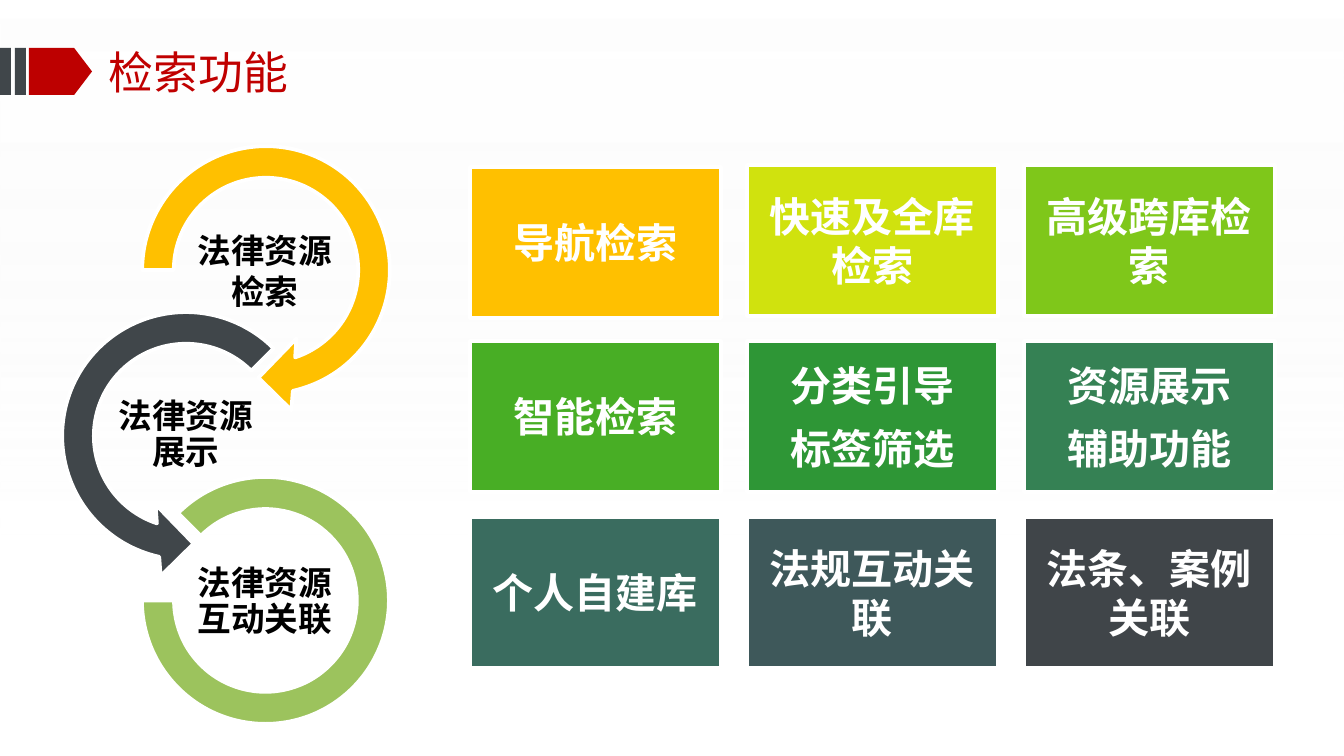
from lxml.etree import SubElement
from pptx import Presentation
from pptx.dml.color import RGBColor
from pptx.enum.shapes import MSO_SHAPE
from pptx.enum.text import MSO_ANCHOR, PP_ALIGN
from pptx.oxml.ns import qn
from pptx.util import Emu, Pt

FONT = "Noto Sans CJK SC"
WIDTH, HEIGHT = 1344, 756
EMU_PER_PX = 9144000 / WIDTH

RED, SLATE = "BD0000", "40464A"
CARD_W, CARD_H = 251, 151
CARD_LEFT, CARD_TOP = 470, 165
COLUMN_STEP, ROW_STEP = 277, 176
CARDS = [
    ("导航检索", "FFC000"), ("快速及全库检索", "D0E20E"), ("高级跨库检索", "7FC71A"),
    ("智能检索", "48AE25"), ("分类引导\n标签筛选", "2E9636"), ("资源展示\n辅助功能", "358154"),
    ("个人自建库", "3A6C5F"), ("法规互动关联", "3E585A"), ("法条、案例关联", "404549"),
]
# preset, box, adjustments, colour
RINGS = [
    (MSO_SHAPE.CIRCULAR_ARROW, (122, 126, 288, 288), (0.11, 11.42, 45, 108, 0.125), "FFC000"),
    (MSO_SHAPE.LEFT_CIRCULAR_ARROW, (42, 292, 288, 288), (0.11, 11.42, 63, 189, 0.125), SLATE),
    (MSO_SHAPE.BLOCK_ARC, (142, 477, 247, 247), (135, 108, 0.13), "9CC35D"),
]
# text, left, top, line spacing
RING_LABELS = [
    ("法律资源检索", 185, 231, 1.0),
    ("法律资源展示", 106, 396, 0.9),
    ("法律资源互动关联", 185, 563, 0.9),
]


def px(n):
    return Emu(round(n * EMU_PER_PX))


def rgb(value):
    return RGBColor.from_string(value)


def add_shape(slide, preset, box, color, outlined=False, adjustments=()):
    s = slide.shapes.add_shape(preset, *map(px, box))
    s.shadow.inherit = False
    s.fill.solid()
    s.fill.fore_color.rgb = rgb(color)
    if outlined:
        s.line.color.rgb = rgb("FFFFFF")
        s.line.width = Pt(2)
    else:
        s.line.fill.background()
    for i, value in enumerate(adjustments):
        s.adjustments[i] = value
    return s


def set_text(s, text, size, color, inset, bold=True, align=PP_ALIGN.CENTER, spacing=1.0):
    tf = s.text_frame
    tf.word_wrap = True
    tf.vertical_anchor = MSO_ANCHOR.MIDDLE
    tf.margin_left = tf.margin_right = tf.margin_top = tf.margin_bottom = px(inset)
    tf.text = text
    for p in tf.paragraphs:
        p.alignment = align
        p.line_spacing = spacing
        p.space_after = Pt(7)
        for r in p.runs:
            r.font.name = FONT
            r.font.size = Pt(size)
            r.font.bold = bold
            r.font.color.rgb = rgb(color)
            SubElement(r.font._element, qn("a:ea"), typeface=FONT)


def add_backdrop(slide):
    """Cover the slide with a translucent vertical gradient."""
    s = add_shape(slide, MSO_SHAPE.RECTANGLE, (0, 0, WIDTH, HEIGHT), "FFFFFF")
    s.fill.gradient()
    s.fill.gradient_angle = 270
    stops = [("FFFFFF", 0, 55), ("F2F2F2", 0.71, 0)]
    for stop, (color, position, opacity) in zip(s.fill.gradient_stops, stops):
        stop.color.rgb = rgb(color)
        stop.position = position
        clr = stop._gs.find(qn("a:srgbClr"))
        SubElement(clr, qn("a:alpha"), val=str(opacity * 1000))


def add_header(slide):
    add_shape(slide, MSO_SHAPE.PENTAGON, (29, 48, 63, 47), RED, adjustments=[0.38])
    for left in (15, 0):
        add_shape(slide, MSO_SHAPE.RECTANGLE, (left, 48, 11, 47), SLATE)
    title = slide.shapes.add_textbox(*map(px, (109, 40, 659, 63)))
    set_text(title, "检索功能", 24, "C00000", 0, bold=False, align=PP_ALIGN.LEFT)


def add_rings(slide):
    for preset, box, adjustments, color in RINGS:
        add_shape(slide, preset, box, color, True, adjustments)
    for text, left, top, spacing in RING_LABELS:
        label = slide.shapes.add_textbox(*map(px, (left, top, 160, 79)))
        set_text(label, text, 18, "000000", 1, spacing=spacing)


def add_cards(slide):
    for i, (text, color) in enumerate(CARDS):
        row, column = divmod(i, 3)
        left = CARD_LEFT + column * COLUMN_STEP
        top = CARD_TOP + row * ROW_STEP + (2 if i == 0 else 0)
        card = add_shape(slide, MSO_SHAPE.RECTANGLE, (left, top, CARD_W, CARD_H), color, True)
        set_text(card, text, 22, "FFFFFF", 12)


def main():
    prs = Presentation()
    prs.slide_width, prs.slide_height = px(WIDTH), px(HEIGHT)
    slide = prs.slides.add_slide(prs.slide_layouts[6])
    add_backdrop(slide)
    add_header(slide)
    add_rings(slide)
    add_cards(slide)
    prs.save("out.pptx")


if __name__ == "__main__":
    main()
